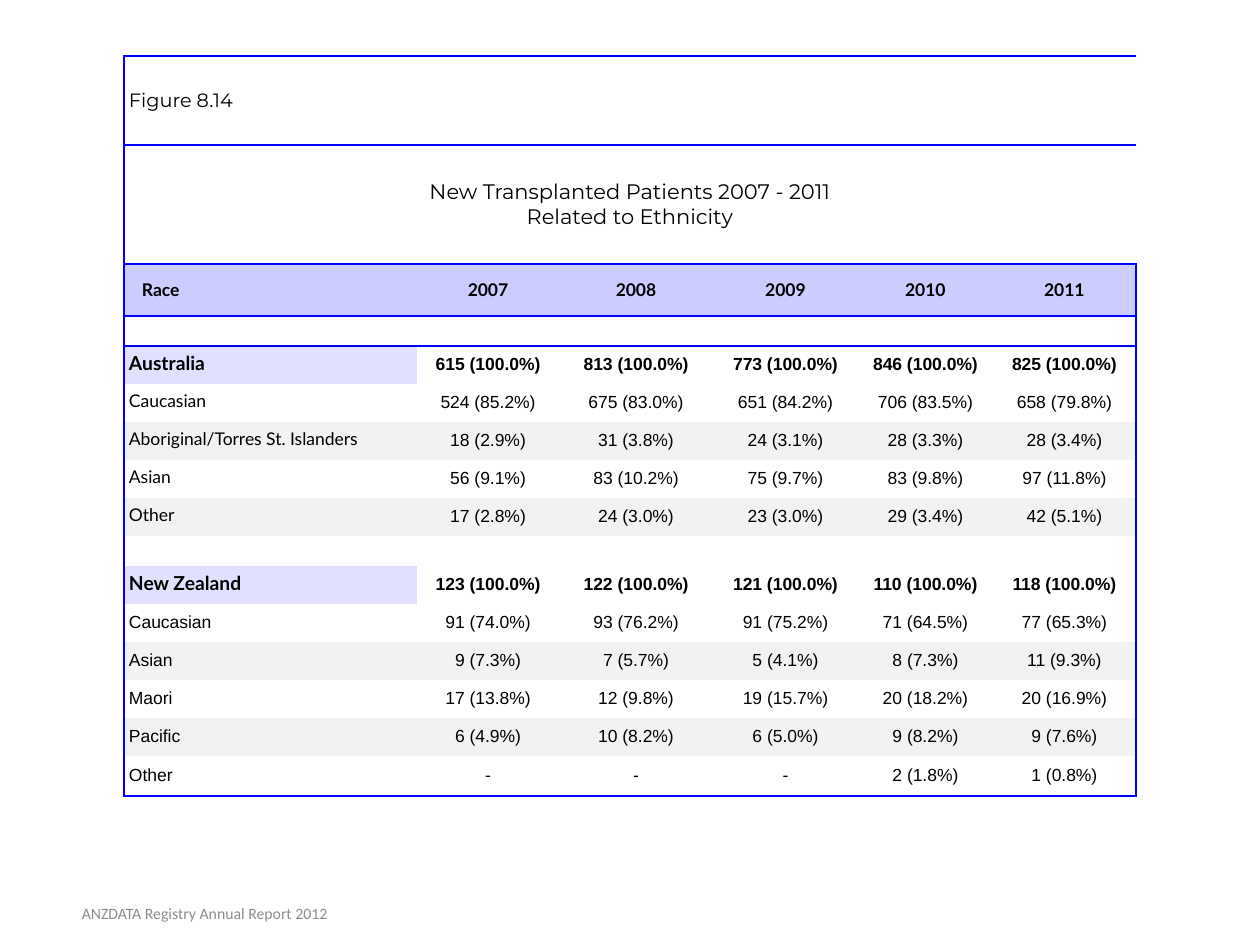
from lxml import etree
from pptx import Presentation
from pptx.dml.color import RGBColor
from pptx.enum.text import MSO_ANCHOR, PP_ALIGN
from pptx.oxml.ns import qn
from pptx.util import Pt

PX = 914400 // 126
LEFT, CENTER, MIDDLE = PP_ALIGN.LEFT, PP_ALIGN.CENTER, MSO_ANCHOR.MIDDLE
BLACK = RGBColor(0x00, 0x00, 0x00)
BLUE = RGBColor(0x00, 0x00, 0xFF)
HEADER = RGBColor(0xCC, 0xCC, 0xFF)
COUNTRY = RGBColor(0xE1, 0xE1, 0xFF)
BAND = RGBColor(0xF2, 0xF2, 0xF2)
GRAY = RGBColor(0x8C, 0x8C, 0x8C)
NO_STYLE = "{2D5ABB26-0587-4C30-8999-92F81FD0307C}"

COL_WIDTHS = [293, 142, 154, 145, 135, 143]
FIGURE_H, TITLE_H, HEADER_H, GAP_H, ROW_H, LAST_H = 89, 119, 52, 30, 38, 40
YEARS = ["Race", "2007", "2008", "2009", "2010", "2011"]
AUSTRALIA = [
    ["Australia", "615 (100.0%)", "813 (100.0%)", "773 (100.0%)", "846 (100.0%)", "825 (100.0%)"],
    ["Caucasian", "524 (85.2%)", "675 (83.0%)", "651 (84.2%)", "706 (83.5%)", "658 (79.8%)"],
    ["Aboriginal/Torres St. Islanders", "18 (2.9%)", "31 (3.8%)", "24 (3.1%)", "28 (3.3%)", "28 (3.4%)"],
    ["Asian", "56 (9.1%)", "83 (10.2%)", "75 (9.7%)", "83 (9.8%)", "97 (11.8%)"],
    ["Other", "17 (2.8%)", "24 (3.0%)", "23 (3.0%)", "29 (3.4%)", "42 (5.1%)"],
]
NEW_ZEALAND = [
    ["New Zealand", "123 (100.0%)", "122 (100.0%)", "121 (100.0%)", "110 (100.0%)", "118 (100.0%)"],
    ["Caucasian", "91 (74.0%)", "93 (76.2%)", "91 (75.2%)", "71 (64.5%)", "77 (65.3%)"],
    ["Asian", "9 (7.3%)", "7 (5.7%)", "5 (4.1%)", "8 (7.3%)", "11 (9.3%)"],
    ["Maori", "17 (13.8%)", "12 (9.8%)", "19 (15.7%)", "20 (18.2%)", "20 (16.9%)"],
    ["Pacific", "6 (4.9%)", "10 (8.2%)", "6 (5.0%)", "9 (8.2%)", "9 (7.6%)"],
    ["Other", "-", "-", "-", "2 (1.8%)", "1 (0.8%)"],
]
HEADER_ROW = 2
AU_ROW = HEADER_ROW + 2
NZ_ROW = AU_ROW + len(AUSTRALIA) + 1
LAST_ROW = NZ_ROW + len(NEW_ZEALAND) - 1


def write(tf, text, font, size, color=BLACK, bold=False, align=CENTER):
    tf.text = text
    for p in tf.paragraphs:
        p.alignment = align
        p.font.name, p.font.size, p.font.bold = font, Pt(size), bold
        p.font.color.rgb = color


def add_border(cell, sides):
    """Draw blue lines on the sides named by letters, given in the order L, R, T, B."""
    for side in sides:
        ln = etree.SubElement(cell._tc.get_or_add_tcPr(), qn("a:ln" + side), w=str(Pt(1)))
        fill = etree.SubElement(ln, qn("a:solidFill"))
        etree.SubElement(fill, qn("a:srgbClr"), val=str(BLUE))


prs = Presentation()
prs.slide_width, prs.slide_height = 1260 * PX, 945 * PX
s = prs.slides.add_slide(prs.slide_layouts[6])

heights = [FIGURE_H, TITLE_H, HEADER_H, GAP_H] + [ROW_H] * len(AUSTRALIA)
heights += [GAP_H] + [ROW_H] * (len(NEW_ZEALAND) - 1) + [LAST_H]
frame = s.shapes.add_table(len(heights), len(COL_WIDTHS), 124 * PX, 56 * PX,
                           sum(COL_WIDTHS) * PX, sum(heights) * PX)
table = frame.table
table.first_row = table.horz_banding = False
table._tbl.tblPr.find(qn("a:tableStyleId")).text = NO_STYLE
for col, width in zip(table.columns, COL_WIDTHS):
    col.width = width * PX
for row, height in zip(table.rows, heights):
    row.height = height * PX

# Frame, margins and merged heading rows
for r in range(len(heights)):
    for c in range(len(COL_WIDTHS)):
        cell = table.cell(r, c)
        cell.vertical_anchor = MIDDLE
        cell.margin_left = cell.margin_right = 5 * PX
        cell.margin_top = cell.margin_bottom = 2 * PX
        sides = "L" if c == 0 else "R" if c == len(COL_WIDTHS) - 1 else ""
        sides += "T" if r <= HEADER_ROW + 1 else ""
        sides += "B" if r <= HEADER_ROW or r == LAST_ROW else ""
        add_border(cell, sides)
        cell.fill.background()
        if r in (AU_ROW - 1, NZ_ROW - 1):
            cell.text_frame.paragraphs[0]._p.get_or_add_endParaRPr().set("sz", "1000")
for r in range(HEADER_ROW):
    table.cell(r, 0).merge(table.cell(r, len(COL_WIDTHS) - 1))
write(table.cell(0, 0).text_frame, "Figure 8.14", "Montserrat", 11, align=LEFT)
write(table.cell(1, 0).text_frame,
      "New Transplanted Patients 2007 - 2011\nRelated to Ethnicity", "Montserrat", 12)

for c, text in enumerate(YEARS):
    cell = table.cell(HEADER_ROW, c)
    cell.fill.solid()
    cell.fill.fore_color.rgb = HEADER
    write(cell.text_frame, text, "Lato", 10, bold=True, align=CENTER if c else LEFT)
table.cell(HEADER_ROW, 0).margin_left = 18 * PX

# One block per country: a bold total row, then rows banded in alternation
for first, rows, label_font in ((AU_ROW, AUSTRALIA, "Lato"), (NZ_ROW, NEW_ZEALAND, "Arial")):
    for i, values in enumerate(rows):
        total = i == 0
        for c, text in enumerate(values):
            cell = table.cell(first + i, c)
            color = COUNTRY if total and c == 0 else BAND if i and i % 2 == 0 else None
            if color is not None:
                cell.fill.solid()
                cell.fill.fore_color.rgb = color
            if c:
                write(cell.text_frame, text, "Arial", 10, bold=total)
                continue
            font = "Lato" if total else label_font
            write(cell.text_frame, text, font, 11 if total else 10, bold=total, align=LEFT)
            if font == "Lato":
                cell.text_frame.paragraphs[0].line_spacing = 0.75

footer = s.shapes.add_textbox(5 * PX, 888 * PX, 399 * PX, 50 * PX)
tf = footer.text_frame
tf.word_wrap = True
tf.vertical_anchor = MIDDLE
write(tf, "ANZDATA Registry Annual Report 2012", "Calibri", 9, GRAY)

prs.save("out.pptx")
